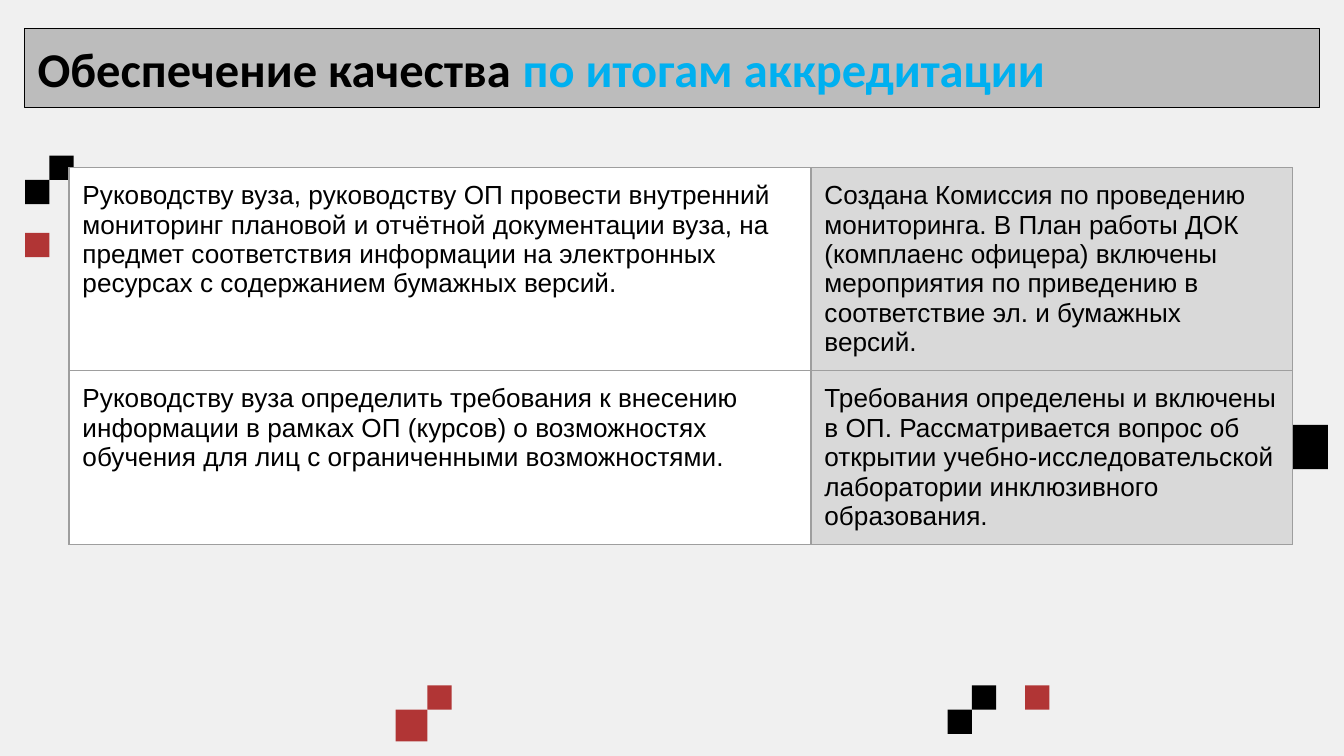
"""Build a slide on quality assurance after accreditation."""
from lxml import etree
from pptx import Presentation
from pptx import util as u
from pptx.dml.color import RGBColor
from pptx.enum import shapes, text
from pptx.oxml.ns import qn

COLORS = {
    "page": "F0F0F0", "black": "000000", "red": "B13535", "bar": "BCBCBC",
    "blue": "00B0F0", "white": "FFFFFF", "gray": "D9D9D9", "border": "9E9E9E",
}
TITLE = [("Обеспечение качества ", "black"), ("по итогам аккредитации", "blue")]
ROWS = [
    ("Руководству вуза, руководству ОП провести внутренний мониторинг плановой и "
     "отчётной документации вуза, на предмет соответствия информации на электронных "
     "ресурсах с содержанием бумажных версий.",
     "Создана Комиссия по проведению мониторинга. В План работы ДОК (комплаенс офицера) "
     "включены мероприятия по приведению в соответствие эл. и бумажных версий."),
    ("Руководству вуза определить требования к внесению информации в рамках ОП (курсов) "
     "о возможностях обучения для лиц с ограниченными возможностями.",
     "Требования определены и включены в ОП. Рассматривается вопрос об открытии "
     "учебно-исследовательской лаборатории инклюзивного образования."),
]
SQUARES = [
    (229, 367.2, 13, "red"), (212, 380.2, 17, "red"),
    (507.6, 380.2, 13, "black"), (520.6, 367.2, 13, "black"), (549.2, 367.2, 13, "red"),
    (692.2, 227.6, 19.2, "black"),
    (26.5, 83.4, 13, "black"), (13.5, 96.4, 13, "black"), (13.5, 124.8, 13, "red"),
]
SQUARES[5] = (687.6, 227.6, 23.8, "black")
COLUMN_WIDTHS = [397.5, 257.8]
ROW_HEIGHTS = [108.3, 91.1]
CELL_FILLS = ["white", "gray"]
INSET = 7.2


def color(name):
    return RGBColor.from_string(COLORS[name])


def paint(target, name):
    target.fill.solid()
    target.fill.fore_color.rgb = color(name)


def add_rectangle(page, left, top, width, height, fill):
    box = page.shapes.add_shape(
        shapes.MSO_SHAPE.RECTANGLE, u.Pt(left), u.Pt(top), u.Pt(width), u.Pt(height))
    box.shadow.inherit = False
    paint(box, fill)
    box.line.fill.background()
    return box


def add_span(para, words, font, size, name, bold=False):
    span = para.add_run()
    span.text = words
    span.font.name, span.font.size, span.font.bold = font, u.Pt(size), bold
    span.font.color.rgb = color(name)


def set_insets(target):
    target.margin_left = target.margin_right = u.Pt(INSET)
    target.margin_top = target.margin_bottom = u.Pt(INSET)


def add_borders(cell):
    properties = cell._tc.get_or_add_tcPr()
    for index, side in enumerate(("lnL", "lnR", "lnT", "lnB")):
        line = etree.Element(qn(f"a:{side}"), w=str(u.Pt(0.75)))
        fill = etree.SubElement(line, qn("a:solidFill"))
        etree.SubElement(fill, qn("a:srgbClr"), val=COLORS["border"])
        properties.insert(index, line)


def add_title(page):
    bar = add_rectangle(page, 13, 15.1, 694, 42.5, "bar")
    bar.line.color.rgb = color("black")
    bar.line.width = u.Pt(0.75)
    frame = bar.text_frame
    frame.word_wrap = True
    frame.vertical_anchor = text.MSO_ANCHOR.MIDDLE
    set_insets(frame)
    para = frame.paragraphs[0]
    para.alignment = text.PP_ALIGN.LEFT
    for words, name in TITLE:
        add_span(para, words, "Calibri", 26, name, bold=True)


def add_measures(page):
    table = page.shapes.add_table(
        len(ROWS), len(COLUMN_WIDTHS), u.Pt(37), u.Pt(89.8),
        u.Pt(sum(COLUMN_WIDTHS)), u.Pt(sum(ROW_HEIGHTS))).table
    table.first_row = table.horz_banding = False
    for column, width in zip(table.columns, COLUMN_WIDTHS):
        column.width = u.Pt(width)
    for row, height, entries in zip(table.rows, ROW_HEIGHTS, ROWS):
        row.height = u.Pt(height)
        for cell, words, fill in zip(row.cells, entries, CELL_FILLS):
            paint(cell, fill)
            set_insets(cell)
            add_borders(cell)
            add_span(cell.text_frame.paragraphs[0], words, "Arial", 14, "black")


def main():
    deck = Presentation()
    deck.slide_width, deck.slide_height = u.Pt(720), u.Pt(405)
    page = deck.slides.add_slide(deck.slide_layouts[6])
    paint(page.background, "page")
    for left, top, side, name in SQUARES:
        add_rectangle(page, left, top, side, side, name)
    add_title(page)
    add_measures(page)
    deck.save("out.pptx")


if __name__ == "__main__":
    main()
